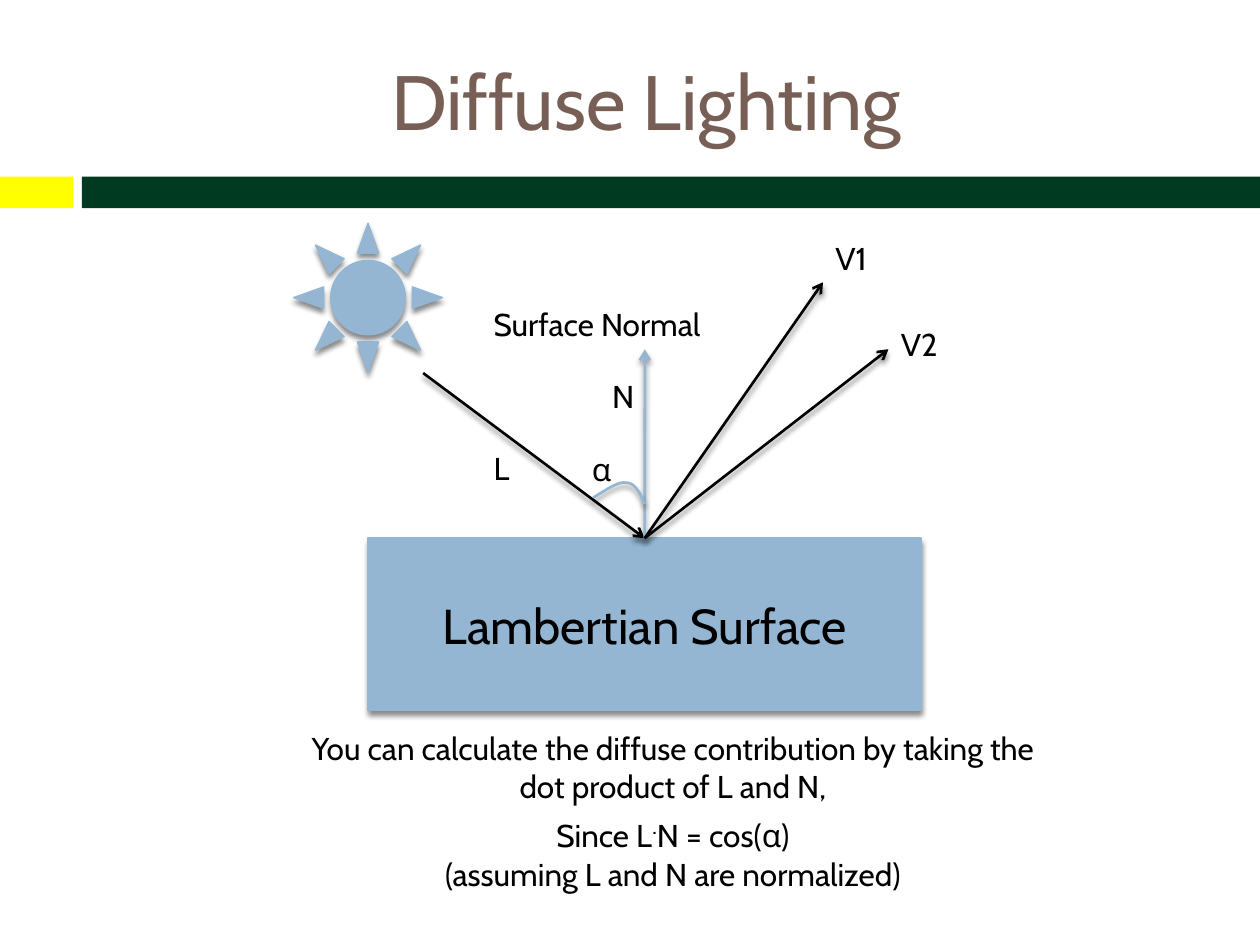
from lxml.etree import SubElement
from pptx import Presentation
from pptx.dml.color import RGBColor
from pptx.enum.shapes import MSO_CONNECTOR, MSO_SHAPE
from pptx.enum.text import MSO_ANCHOR, MSO_AUTO_SIZE, PP_ALIGN
from pptx.oxml.ns import qn
from pptx.util import Cm, Pt

FONT = "Cabin"
BLACK, BLUE, BROWN = "000000", "94B6D2", "775F55"
YELLOW, GREEN = "FFFF00", "003A20"
TOP = 0  # connection site at the middle of a rectangle's top side


def color(hex_string):
    return RGBColor.from_string(hex_string)


def bezier(start, control1, control2, end, steps=12):
    """Points along a cubic curve, without its start."""
    points = []
    for step in range(1, steps + 1):
        t = step / steps
        weights = ((1 - t) ** 3, 3 * t * (1 - t) ** 2, 3 * t ** 2 * (1 - t), t ** 3)
        corners = (start, control1, control2, end)
        points.append(tuple(sum(w * c[axis] for w, c in zip(weights, corners))
                            for axis in (0, 1)))
    return points


class Diagram:
    def __init__(self, slide):
        self.slide = slide
        self.shapes = slide.shapes

    def add_run(self, paragraph, text, size=18, fill=BLACK, baseline=None):
        run = paragraph.add_run()
        run.text = text
        run.font.name = FONT
        run.font.size = Pt(size)
        run.font.color.rgb = color(fill)
        if baseline:
            run.font._element.set("baseline", str(baseline * 1000))

    def title(self, text, left, top, width, height):
        title = self.shapes.title
        title.left, title.top = Cm(left), Cm(top)
        title.width, title.height = Cm(width), Cm(height)
        title.text_frame.vertical_anchor = MSO_ANCHOR.MIDDLE
        paragraph = title.text_frame.paragraphs[0]
        paragraph.alignment = PP_ALIGN.CENTER
        self.add_run(paragraph, text, 44, BROWN)

    def shadow(self, shape):
        properties = shape._element.spPr
        effects = properties.find(qn("a:effectLst"))
        if effects is None:
            effects = SubElement(properties, qn("a:effectLst"))
        outer = SubElement(effects, qn("a:outerShdw"), blurRad=str(Pt(3)),
                           dist=str(Pt(2.4)), dir="5400000", rotWithShape="0")
        tint = SubElement(outer, qn("a:srgbClr"), val=BLACK)
        SubElement(tint, qn("a:alpha"), val="45000")

    def bar(self, left, top, width, height, fill, kind=MSO_SHAPE.RECTANGLE):
        shape = self.shapes.add_shape(kind, Cm(left), Cm(top), Cm(width), Cm(height))
        shape.shadow.inherit = False
        shape.fill.solid()
        shape.fill.fore_color.rgb = color(fill)
        shape.line.fill.background()
        return shape

    def solid(self, kind, left, top, width, height, text=None):
        shape = self.bar(left, top, width, height, BLUE, kind)
        shape.line.color.rgb = color(BLUE)
        shape.line.width = Pt(0.79)
        self.shadow(shape)
        if text:
            shape.text_frame.vertical_anchor = MSO_ANCHOR.MIDDLE
            paragraph = shape.text_frame.paragraphs[0]
            paragraph.alignment = PP_ALIGN.CENTER
            self.add_run(paragraph, text, 28)
        return shape

    def ray(self, surface, x, y, stroke=BLACK, incoming=False):
        """Arrow between the point (x, y) and the middle of the surface's top."""
        line = self.shapes.add_connector(MSO_CONNECTOR.STRAIGHT,
                                         Cm(x), Cm(y), Cm(x), Cm(y))
        if incoming:
            line.end_connect(surface, TOP)
        else:
            line.begin_connect(surface, TOP)
        line.line.color.rgb = color(stroke)
        line.line.width = Pt(1.5)
        SubElement(line.line._get_or_add_ln(), qn("a:tailEnd"), type="arrow")
        self.shadow(line)

    def arc(self, points):
        emu = [(Cm(x), Cm(y)) for x, y in points]
        builder = self.shapes.build_freeform(*emu[0])
        builder.add_line_segments(emu[1:], close=False)
        curve = builder.convert_to_shape()
        curve.shadow.inherit = False
        curve.fill.background()
        curve.line.color.rgb = color(BLUE)
        curve.line.width = Pt(1.5)
        self.shadow(curve)

    def text_box(self, left, top, width, height, wrap):
        box = self.shapes.add_textbox(Cm(left), Cm(top), Cm(width), Cm(height))
        box.text_frame.word_wrap = wrap
        box.text_frame.auto_size = MSO_AUTO_SIZE.SHAPE_TO_FIT_TEXT
        return box.text_frame

    def label(self, text, left, top, width):
        frame = self.text_box(left, top, width, 1.02, False)
        self.add_run(frame.paragraphs[0], text)

    def note(self, paragraphs, left, top, width, height):
        frame = self.text_box(left, top, width, height, True)
        for index, runs in enumerate(paragraphs):
            paragraph = frame.add_paragraph() if index else frame.paragraphs[0]
            paragraph.alignment = PP_ALIGN.CENTER
            for run in runs:
                self.add_run(paragraph, **run)


def main():
    deck = Presentation()
    deck.slide_width, deck.slide_height = Cm(25.4), Cm(19.05)
    diagram = Diagram(deck.slides.add_slide(deck.slide_layouts[5]))

    # Heading and the band below it
    diagram.bar(0, 3.56, 1.47, 0.64, YELLOW)
    diagram.bar(1.65, 3.56, 23.75, 0.64, GREEN)
    diagram.title("Diffuse Lighting", 1.7, 0.64, 22.66, 2.74)

    # Surface and light source
    surface = diagram.solid(MSO_SHAPE.RECTANGLE, 7.42, 10.85, 11.15, 3.48,
                            "Lambertian Surface")
    diagram.solid(MSO_SHAPE.SUN, 5.92, 4.5, 3, 3)

    # Light, normal and view directions, with the angle between L and N
    diagram.ray(surface, 8.53, 7.52, incoming=True)
    diagram.ray(surface, 13, 7.04, BLUE)
    angle_start, angle_peak = (11.96, 10.03), (12.62, 9.73)
    diagram.arc([angle_start]
                + bezier(angle_start, (12.22, 9.88), (12.45, 9.7), angle_peak)
                + bezier(angle_peak, (12.8, 9.73), (12.9, 9.93), (13, 10.16)))
    diagram.ray(surface, 16.59, 5.69)
    diagram.ray(surface, 17.91, 7.04)

    # Labels
    for text, left, top, width in (
        ("Surface Normal", 9.7, 6.02, 4.98),
        ("N", 12.09, 7.47, 0.97),
        ("L", 9.7, 8.92, 0.84),
        ("α", 11.68, 8.94, 0.89),
        ("V1", 16.59, 4.7, 1.32),
        ("V2", 17.91, 6.43, 1.32),
    ):
        diagram.label(text, left, top, width)

    # Explanation
    diagram.note([
        [{"text": "You can calculate the diffuse contribution by taking the "
                  "dot product of L and N,"}],
        [{"text": "Since L"}, {"text": ".", "size": 24, "baseline": 30},
         {"text": "N = cos(α)"}],
        [{"text": "(assuming L and N are normalized)"}],
    ], 5.97, 14.58, 15.19, 3.33)

    deck.save("out.pptx")


if __name__ == "__main__":
    main()
